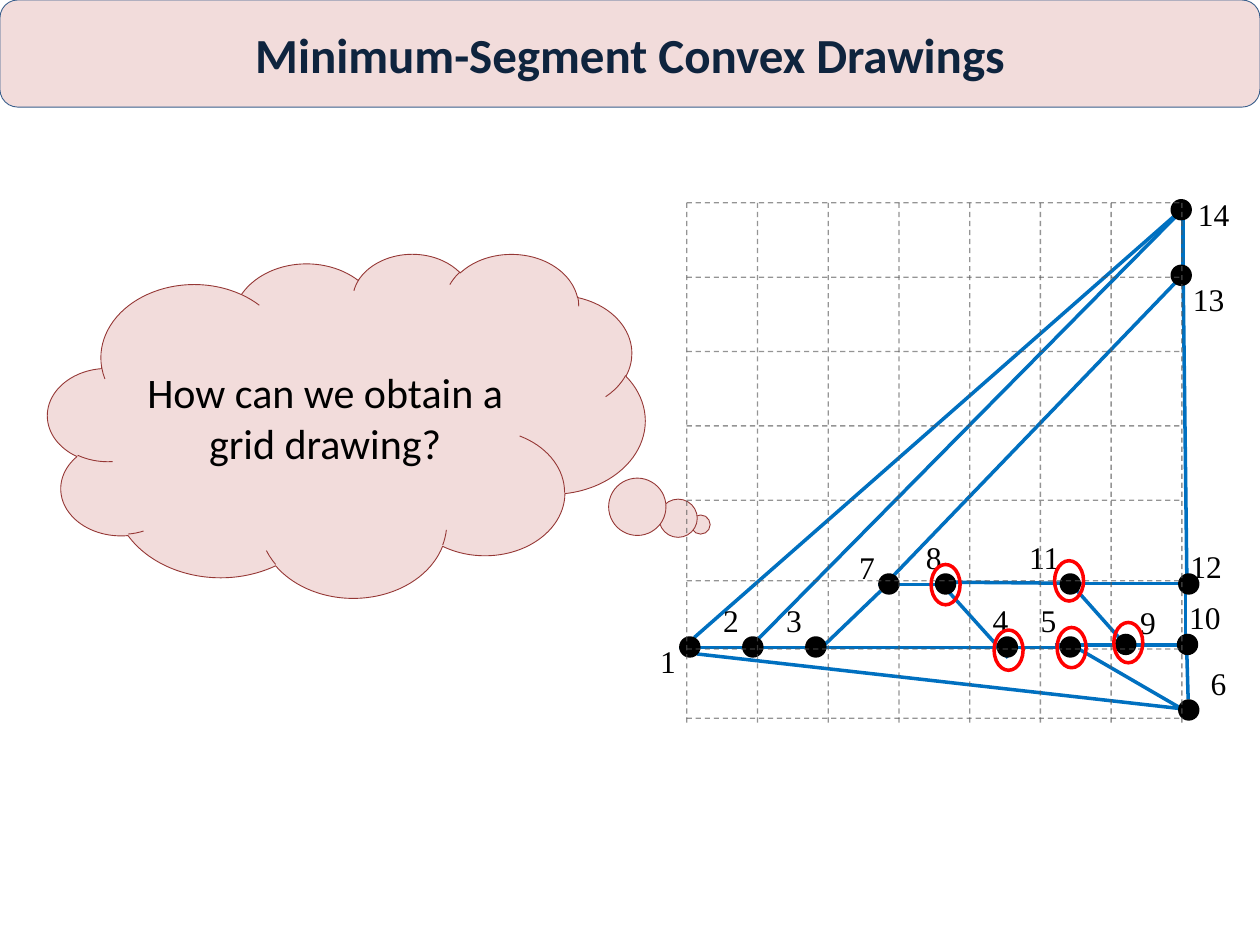
import pptx
import pptx.util
import pptx.dml.color
import pptx.enum.dml
import pptx.enum.shapes
import pptx.enum.text
import pptx.oxml
import pptx.oxml.ns
from lxml import etree

Inches = pptx.util.Inches
Pt = pptx.util.Pt
SHAPE = pptx.enum.shapes.MSO_SHAPE

COLORS = {"pink": "F2DCDB", "cloud_line": "953735", "title_line": "3A5F8C",
          "title": "0F243E", "edge": "0070C0", "grid": "595959",
          "black": "000000", "mark": "FF0000"}

TITLE = "Minimum-Segment Convex Drawings"
QUESTION = "How can we obtain a grid drawing?"

EDGES = [
    ((9.35, 1.7), (5.96, 5.13)), ((9.39, 1.68), (9.39, 2.22)),
    ((9.39, 2.18), (9.42, 4.6)), ((9.39, 2.18), (7.08, 4.58)),
    ((9.41, 5.09), (9.41, 4.62)), ((8.57, 4.63), (9.39, 4.63)),
    ((7.46, 4.62), (8.57, 4.63)), ((8.37, 5.12), (9.02, 5.12)),
    ((9.43, 5.55), (9.42, 5.2)), ((9.02, 5.12), (9.34, 5.12)),
    ((8, 5.22), (7.46, 4.62)), ((6.97, 4.64), (7.59, 4.64)),
    ((6.5, 5.16), (6.99, 4.69)), ((5.39, 5.14), (8.41, 5.14)),
    ((5.53, 5.19), (9.51, 5.64)), ((8.44, 5.08), (9.49, 5.69)),
    ((8.55, 4.69), (8.88, 5.06)), ((9.36, 1.68), (5.51, 5.06)),
]

# vertex number: (dot left, dot top), (label left, label top)
VERTICES = {
    1: ((5.39, 5.05), (5.14, 5.05)), 2: ((5.89, 5.05), (5.64, 4.72)),
    3: ((6.39, 5.05), (6.14, 4.72)), 4: ((7.91, 5.05), (7.78, 4.72)),
    5: ((8.41, 5.05), (8.16, 4.72)), 6: ((9.35, 5.55), (9.51, 5.22)),
    7: ((6.97, 4.55), (6.72, 4.3)), 8: ((7.42, 4.55), (7.25, 4.22)),
    9: ((8.85, 5.03), (8.95, 4.74)), 10: ((9.34, 5.03), (9.34, 4.7)),
    11: ((8.41, 4.55), (8.07, 4.22)), 12: ((9.35, 4.55), (9.35, 4.29)),
    13: ((9.29, 2.1), (9.37, 2.17)), 14: ((9.29, 1.58), (9.41, 1.5)),
}
DOT = 0.17

MARKS = [(7.39, 4.48), (8.37, 4.45), (8.39, 4.98), (8.84, 4.94), (7.89, 5)]
MARK_SIZE = (0.23, 0.32)

GRID_LEFT, GRID_RIGHT, GRID_TOP, GRID_BOTTOM = 5.45, 9.38, 1.61, 5.74
GRID_COLUMNS = 8
GRID_ROWS = [1.61, 2.2, 2.79, 3.38, 3.97, 4.61, 5.15, 5.7]


def rgb(name):
    return pptx.dml.color.RGBColor.from_string(COLORS[name])


def add_shape(shapes, kind, left, top, width, height, fill=None, line=None, weight=0.5):
    sp = shapes.add_shape(kind, Inches(left), Inches(top), Inches(width), Inches(height))
    sp.shadow.inherit = False
    if fill:
        sp.fill.solid()
        sp.fill.fore_color.rgb = rgb(fill)
    else:
        sp.fill.background()
    if line:
        sp.line.color.rgb = rgb(line)
        sp.line.width = Pt(weight)
    else:
        sp.line.fill.background()
    return sp


def add_line(shapes, start, end, color, weight):
    cn = shapes.add_connector(pptx.enum.shapes.MSO_CONNECTOR.STRAIGHT,
                              *(Inches(v) for v in start + end))
    cn.line.color.rgb = rgb(color)
    cn.line.width = Pt(weight)
    etree.SubElement(cn._element.spPr, pptx.oxml.ns.qn("a:effectLst"))
    return cn


def add_grid_line(shapes, start, end):
    cn = add_line(shapes, start, end, "grid", 0.75)
    cn.line.dash_style = pptx.enum.dml.MSO_LINE.DASH
    clr = cn._element.spPr.find(".//" + pptx.oxml.ns.qn("a:srgbClr"))
    etree.SubElement(clr, pptx.oxml.ns.qn("a:alpha"), val="63000")


def set_text(sp, text, size, font, color, bold=False, centred=True):
    tf = sp.text_frame
    tf.word_wrap = True
    tf.text = text
    p = tf.paragraphs[0]
    if centred:
        tf.vertical_anchor = pptx.enum.text.MSO_ANCHOR.MIDDLE
        p.alignment = pptx.enum.text.PP_ALIGN.CENTER
    r = p.runs[0]
    r.font.size = Pt(size)
    r.font.name = font
    r.font.bold = bold
    r.font.color.rgb = rgb(color)


def add_graph(shapes):
    for start, end in EDGES:
        add_line(shapes, start, end, "edge", 2)
    for number, (dot, label) in VERTICES.items():
        add_shape(shapes, SHAPE.OVAL, *dot, DOT, DOT, "black")
        width = 0.42 if number < 10 else 0.5
        tb = shapes.add_textbox(*(Inches(v) for v in label + (width, 0.4)))
        set_text(tb, str(number), 18, "Times New Roman", "black", centred=False)


def add_grid(shapes):
    step = (GRID_RIGHT - GRID_LEFT) / (GRID_COLUMNS - 1)
    for i in range(GRID_COLUMNS):
        x = GRID_LEFT + i * step
        add_grid_line(shapes, (x, GRID_TOP), (x, GRID_BOTTOM))
    for y in GRID_ROWS:
        add_grid_line(shapes, (GRID_LEFT, y), (GRID_RIGHT, y))


def main():
    prs = pptx.Presentation()
    prs.slide_width, prs.slide_height = Inches(10), Inches(7.5)
    s = prs.slides.add_slide(prs.slide_layouts[6])

    cloud = add_shape(s.shapes, SHAPE.CLOUD_CALLOUT, 0.38, 2.01, 4.74, 2.73,
                      "pink", "cloud_line")
    cloud.adjustments[0], cloud.adjustments[1] = 0.593, 0.289
    set_text(cloud, QUESTION, 24, "Calibri", "black")

    title = add_shape(s.shapes, SHAPE.ROUNDED_RECTANGLE, 0, 0, 10, 0.85,
                      "pink", "title_line")
    set_text(title, TITLE, 28, "Calibri", "title", bold=True)

    add_graph(s.shapes.add_group_shape().shapes)
    add_grid(s.shapes.add_group_shape().shapes)
    for mark in MARKS:
        add_shape(s.shapes, SHAPE.OVAL, *mark, *MARK_SIZE, line="mark", weight=2)
    prs.save("out.pptx")


if __name__ == "__main__":
    main()
